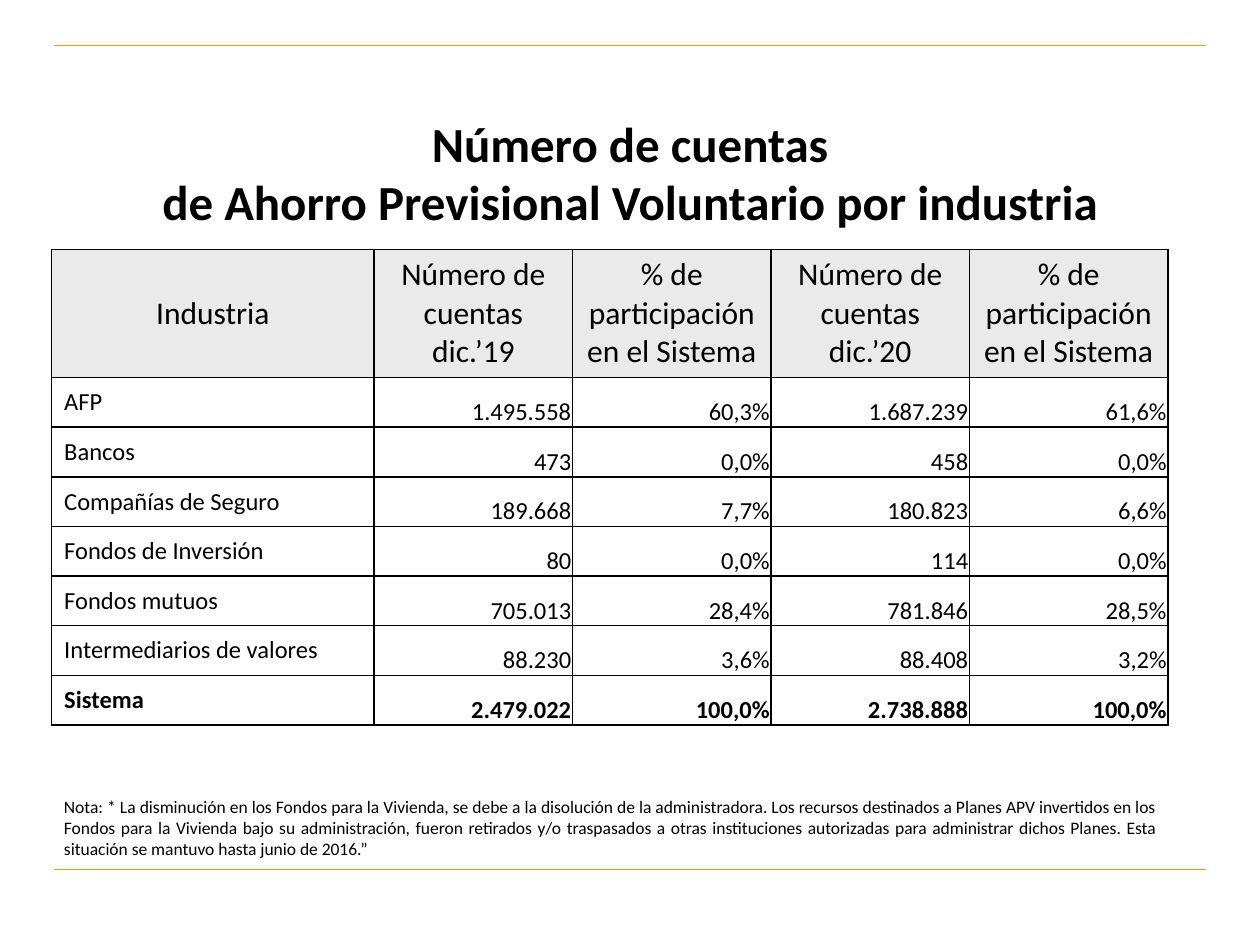
from dataclasses import dataclass

from lxml import etree
from pptx import Presentation
from pptx.dml.color import RGBColor
from pptx.enum.shapes import MSO_CONNECTOR
from pptx.enum.text import MSO_ANCHOR, MSO_AUTO_SIZE, PP_ALIGN
from pptx.oxml.ns import qn
from pptx.util import Inches, Pt

STRAIGHT = MSO_CONNECTOR.STRAIGHT
MIDDLE, BOTTOM = MSO_ANCHOR.MIDDLE, MSO_ANCHOR.BOTTOM
LEFT, CENTER, RIGHT, JUSTIFY = PP_ALIGN.LEFT, PP_ALIGN.CENTER, PP_ALIGN.RIGHT, PP_ALIGN.JUSTIFY
TITLE_ONLY_LAYOUT = 5


@dataclass(frozen=True)
class Theme:
    font: str = "Calibri"
    text: str = "000000"
    rule: str = "FF9900"
    header_fill: str = "EAEAEA"
    body_fill: str = "FFFFFF"
    title_size: int = 28
    header_size: int = 18
    body_size: int = 14
    note_size: int = 10


THEME = Theme()
LABEL_INSETS = (0.1, 0.05, 0.1, 0.05)
NUMBER_INSETS = (0.01, 0.01, 0.01, 0)

TITLE = "Número de cuentas\vde Ahorro Previsional Voluntario por industria"
SHARE_HEADER = "% de participación en el Sistema"
HEADERS = ["Industria", "Número de cuentas\ndic.’19", SHARE_HEADER,
           "Número de cuentas\ndic.’20", SHARE_HEADER]
ACCOUNTS = [
    ["AFP", "1.495.558", "60,3%", "1.687.239", "61,6%"],
    ["Bancos", "473", "0,0%", "458", "0,0%"],
    ["Compañías de Seguro", "189.668", "7,7%", "180.823", "6,6%"],
    ["Fondos de Inversión", "80", "0,0%", "114", "0,0%"],
    ["Fondos mutuos", "705.013", "28,4%", "781.846", "28,5%"],
    ["Intermediarios de valores", "88.230", "3,6%", "88.408", "3,2%"],
    ["Sistema", "2.479.022", "100,0%", "2.738.888", "100,0%"],
]
NOTE = (
    "Nota: * La disminución en los Fondos para la Vivienda, se debe a la disolución de "
    "la administradora. Los recursos destinados a Planes APV invertidos en los Fondos para la "
    "Vivienda bajo su administración, fueron retirados y/o traspasados a otras instituciones "
    "autorizadas para administrar dichos Planes. Esta situación se mantuvo hasta junio de 2016.”"
)


def write_text(text_frame, text, size, align=LEFT, bold=False):
    for index, line in enumerate(text.split("\n")):
        paragraph = text_frame.add_paragraph() if index else text_frame.paragraphs[0]
        paragraph.text = line
        paragraph.alignment = align
        for run in paragraph.runs:
            run.font.name = THEME.font
            run.font.size = Pt(size)
            run.font.bold = bold
            run.font.color.rgb = RGBColor.from_string(THEME.text)


def add_rule(slide, top):
    rule = slide.shapes.add_connector(
        STRAIGHT, Inches(0.43), Inches(top), Inches(9.57), Inches(top))
    rule.line.color.rgb = RGBColor.from_string(THEME.rule)
    rule.line.width = Pt(0.75)
    etree.SubElement(rule._element.spPr, qn("a:effectLst"))


def add_title(slide):
    title = slide.shapes.title
    title.left, title.top = Inches(0.5), Inches(0.99)
    title.width, title.height = Inches(9), Inches(1.02)
    frame = title.text_frame
    frame.auto_size = MSO_AUTO_SIZE.NONE
    frame.vertical_anchor = MIDDLE
    frame.margin_bottom = Inches(0.32)
    write_text(frame, TITLE, THEME.title_size, align=CENTER, bold=True)


def add_borders(cell):
    properties = cell._tc.get_or_add_tcPr()
    for index, side in enumerate(("lnL", "lnR", "lnT", "lnB")):
        border = etree.Element(qn(f"a:{side}"), w=str(Pt(1)))
        fill = etree.SubElement(border, qn("a:solidFill"))
        etree.SubElement(fill, qn("a:srgbClr"), val=THEME.text)
        properties.insert(index, border)


def fill_cell(cell, text, size, align, fill, insets=LABEL_INSETS, anchor=MIDDLE, bold=False):
    cell.margin_left, cell.margin_top, cell.margin_right, cell.margin_bottom = map(Inches, insets)
    cell.vertical_anchor = anchor
    cell.fill.solid()
    cell.fill.fore_color.rgb = RGBColor.from_string(fill)
    add_borders(cell)
    write_text(cell.text_frame, text, size, align=align, bold=bold)


def add_accounts_table(slide):
    row_count, column_count = len(ACCOUNTS) + 1, len(HEADERS)
    table = slide.shapes.add_table(row_count, column_count, Inches(0.41), Inches(1.98),
                                   Inches(8.86), Inches(3.76)).table
    table.first_row = table.horz_banding = False
    for index, column in enumerate(table.columns):
        column.width = Inches(1.575 if index else 2.56)
    for index, row in enumerate(table.rows):
        row.height = Inches(2.76 / len(ACCOUNTS) if index else 1.01)

    for column, header in enumerate(HEADERS):
        fill_cell(table.cell(0, column), header, THEME.header_size, CENTER, THEME.header_fill)
    for row, (industry, *numbers) in enumerate(ACCOUNTS, start=1):
        is_total = row == len(ACCOUNTS)
        fill_cell(table.cell(row, 0), industry, THEME.body_size, LEFT, THEME.body_fill,
                  bold=is_total)
        for column, number in enumerate(numbers, start=1):
            fill_cell(table.cell(row, column), number, THEME.body_size, RIGHT, THEME.body_fill,
                      insets=NUMBER_INSETS, anchor=BOTTOM, bold=is_total)


def add_note(slide):
    note = slide.shapes.add_textbox(Inches(0.41), Inches(6.27), Inches(8.86), Inches(0.61))
    note.text_frame.word_wrap = True
    note.text_frame.auto_size = MSO_AUTO_SIZE.SHAPE_TO_FIT_TEXT
    write_text(note.text_frame, NOTE, THEME.note_size, align=JUSTIFY)


def main():
    presentation = Presentation()
    presentation.slide_width, presentation.slide_height = Inches(10), Inches(7.5)
    slide = presentation.slides.add_slide(presentation.slide_layouts[TITLE_ONLY_LAYOUT])
    for top in (0.36, 6.9):
        add_rule(slide, top)
    add_title(slide)
    add_accounts_table(slide)
    add_note(slide)
    presentation.save("out.pptx")


if __name__ == "__main__":
    main()
